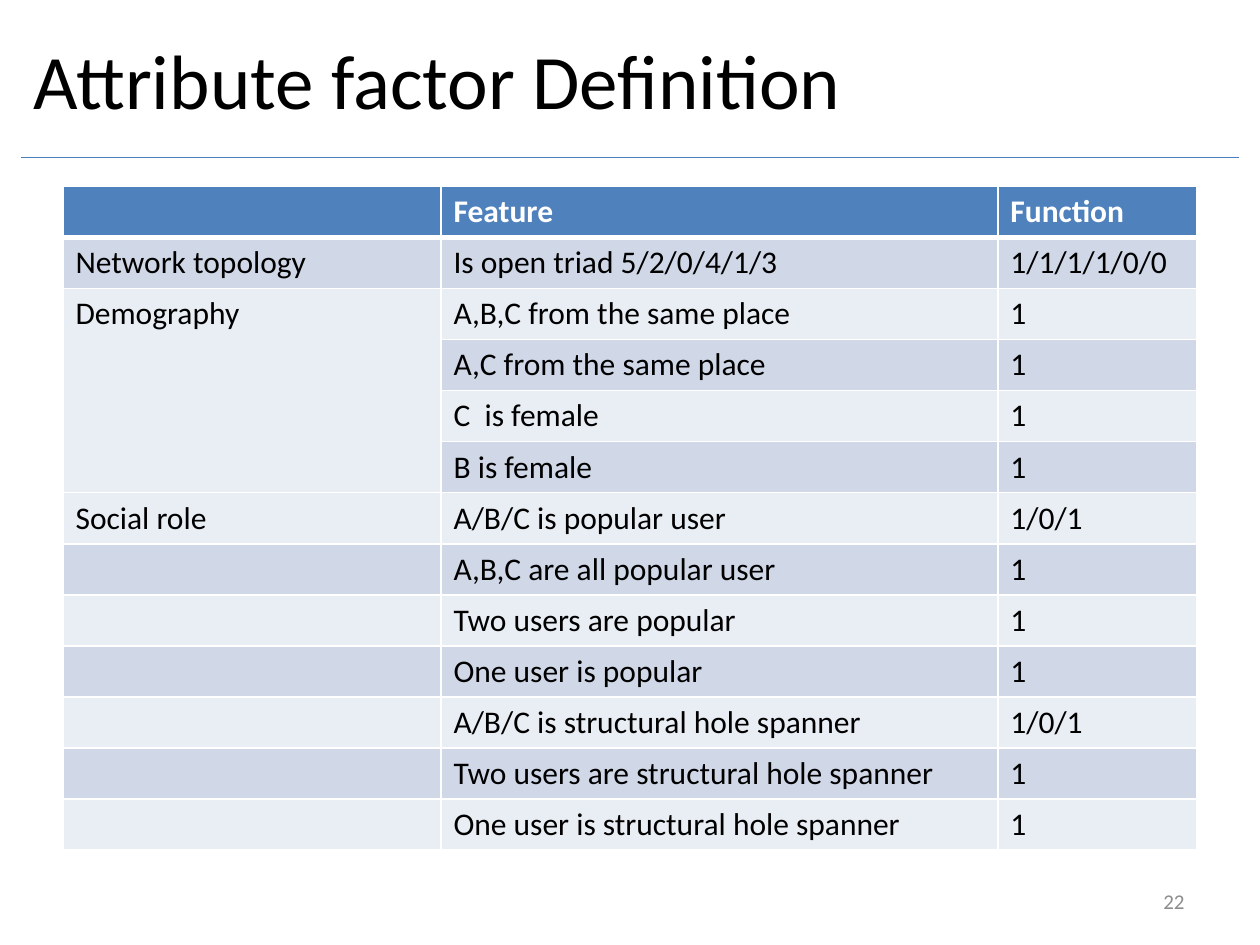
from dataclasses import dataclass

from lxml import etree
from pptx import Presentation, util as u
from pptx.dml.color import RGBColor
from pptx.enum import shapes, text
from pptx.oxml import ns

TITLE = "Attribute factor Definition"
PAGE_NUMBER = "22"
HEADER = ("", "Feature", "Function")
GROUPS = [
    ("Network topology", False, [("Is open triad 5/2/0/4/1/3", "1/1/1/1/0/0")]),
    ("Demography", True, [
        ("A,B,C from the same place", "1"),
        ("A,C from the same place", "1"),
        ("C  is female", "1"),
        ("B is female", "1"),
    ]),
    ("Social role", False, [
        ("A/B/C is popular user", "1/0/1"),
        ("A,B,C are all popular user", "1"),
        ("Two users are popular", "1"),
        ("One user is popular", "1"),
        ("A/B/C is structural hole spanner", "1/0/1"),
        ("Two users are structural hole spanner", "1"),
        ("One user is structural hole spanner", "1"),
    ]),
]


@dataclass(frozen=True)
class Theme:
    font: str = "Calibri"
    ink: str = "000000"
    white: str = "FFFFFF"
    header: str = "4F81BD"
    bands: tuple = ("D0D8E8", "E9EDF4")
    muted: str = "8C8C8C"
    rule: str = "4B7EBC"
    title_size: int = 44
    table_size: int = 18
    number_size: int = 12


THEME = Theme()
WIDTH, HEIGHT = 10, 7.5
MARGIN = 0.17
TITLE_HEIGHT = HEIGHT / 6
TABLE_LEFT, TABLE_TOP = WIDTH / 20, 1.48
TABLE_WIDTH, TABLE_HEIGHT = WIDTH * 0.9, 5.27
COLUMNS = (3, 4.42, 1.58)


def add_run(paragraph, words, size, color, bold=False):
    run = paragraph.add_run()
    run.text = words
    run.font.name = THEME.font
    run.font.size = u.Pt(size)
    run.font.bold = bold
    run.font.color.rgb = RGBColor.from_string(color)


def add_label(slide, box, words, size, color, align):
    shape = slide.shapes.add_textbox(*(u.Inches(value) for value in box))
    frame = shape.text_frame
    frame.word_wrap = True
    frame.vertical_anchor = text.MSO_ANCHOR.MIDDLE
    paragraph = frame.paragraphs[0]
    paragraph.alignment = align
    add_run(paragraph, words, size, color)


def set_borders(cell, widths):
    properties = cell._tc.get_or_add_tcPr()
    for side, width in zip("LRTB", widths):
        line = etree.SubElement(properties, ns.qn(f"a:ln{side}"), w=str(u.Pt(width)))
        fill = etree.SubElement(line, ns.qn("a:solidFill"))
        etree.SubElement(fill, ns.qn("a:srgbClr"), val=THEME.white)


def add_feature_table(slide):
    rows = [HEADER]
    merges = []
    for name, merged, features in GROUPS:
        if merged:
            merges.append((len(rows), len(rows) + len(features) - 1))
        for index, feature in enumerate(features):
            rows.append(("" if index else name, *feature))

    box = (TABLE_LEFT, TABLE_TOP, TABLE_WIDTH, TABLE_HEIGHT)
    table = slide.shapes.add_table(
        len(rows), len(COLUMNS), *(u.Inches(value) for value in box)
    ).table
    for column, width in zip(table.columns, COLUMNS):
        column.width = u.Inches(width)

    for row_index, values in enumerate(rows):
        is_header = row_index == 0
        fill = THEME.header if is_header else THEME.bands[(row_index - 1) % 2]
        color = THEME.white if is_header else THEME.ink
        top = 3 if row_index == 1 else 1
        bottom = 3 if is_header else 1
        for column_index, words in enumerate(values):
            cell = table.cell(row_index, column_index)
            set_borders(cell, (1, 1, top, bottom))
            cell.fill.solid()
            cell.fill.fore_color.rgb = RGBColor.from_string(fill)
            if words:
                paragraph = cell.text_frame.paragraphs[0]
                add_run(paragraph, words, THEME.table_size, color, is_header)

    for first, last in merges:
        table.cell(first, 0).merge(table.cell(last, 0))


def add_rule(slide):
    ends = (MARGIN, TITLE_HEIGHT, WIDTH - MARGIN, TITLE_HEIGHT)
    connector = slide.shapes.add_connector(
        shapes.MSO_CONNECTOR.STRAIGHT, *(u.Inches(value) for value in ends)
    )
    connector.line.color.rgb = RGBColor.from_string(THEME.rule)
    connector.line.width = u.Pt(0.75)
    etree.SubElement(connector._element.spPr, ns.qn("a:effectLst"))


def main():
    presentation = Presentation()
    presentation.slide_width = u.Inches(WIDTH)
    presentation.slide_height = u.Inches(HEIGHT)
    slide = presentation.slides.add_slide(presentation.slide_layouts[6])
    add_label(slide, (MARGIN, 0, WIDTH * 0.9, TITLE_HEIGHT), TITLE,
              THEME.title_size, THEME.ink, text.PP_ALIGN.LEFT)
    add_feature_table(slide)
    add_label(slide, (7.17, 6.95, 2.33, 0.4), PAGE_NUMBER,
              THEME.number_size, THEME.muted, text.PP_ALIGN.RIGHT)
    add_rule(slide)
    presentation.save("out.pptx")


if __name__ == "__main__":
    main()
